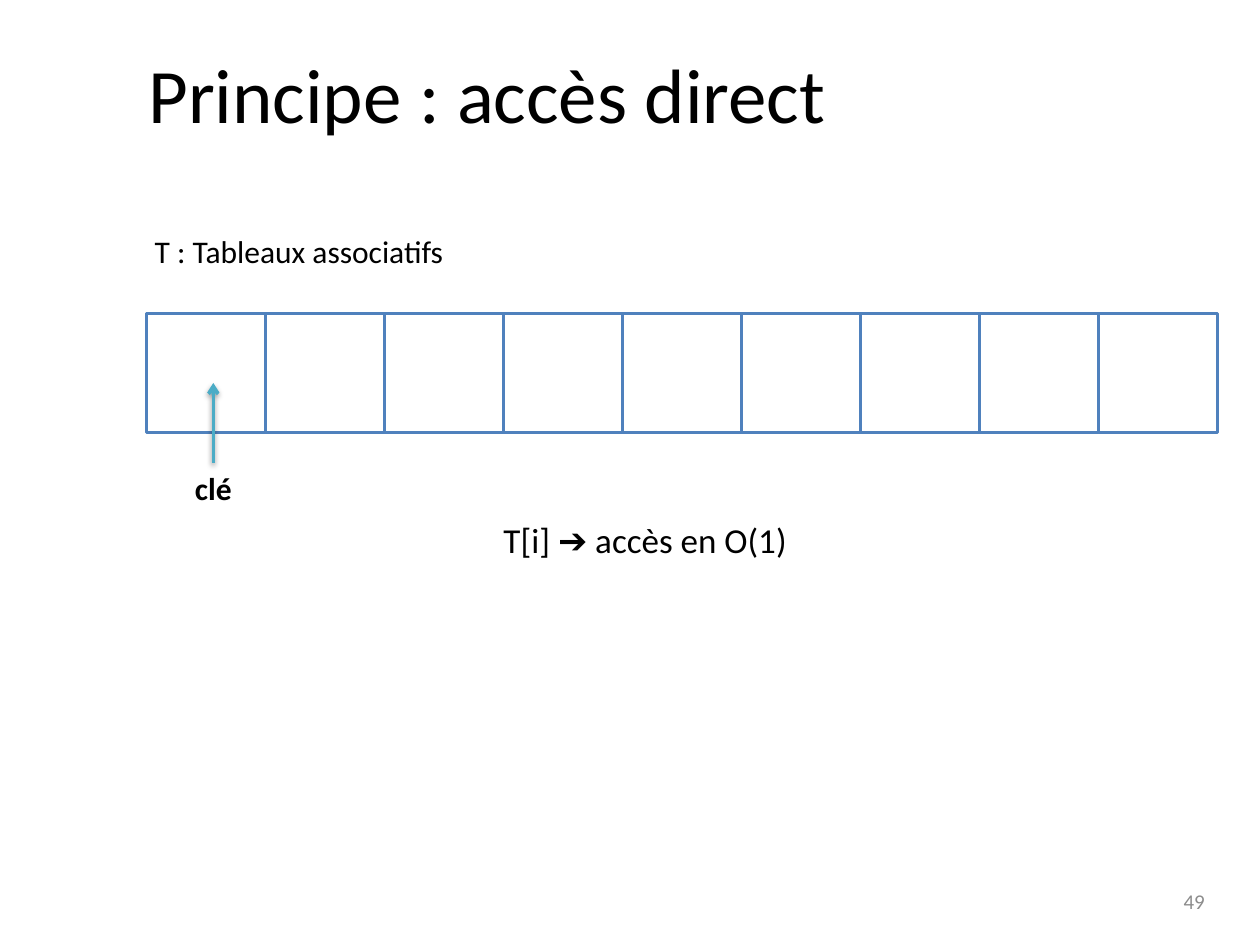
from lxml import etree
from pptx import Presentation
from pptx.dml.color import RGBColor
from pptx.enum.shapes import MSO_CONNECTOR as Connector, MSO_SHAPE as Shape
from pptx.enum.text import MSO_ANCHOR as Anchor, MSO_AUTO_SIZE as AutoSize, PP_ALIGN as Align
from pptx.oxml.ns import qn
from pptx.util import Cm, Pt

COLORS = {
    "text": "000000",
    "number": "8C8C8C",
    "cell": "FFFFFF",
    "border": "4F81BD",
    "arrow": "4BACC6",
    "shadow": "000000",
}
FONT = "Calibri"
CELL_COUNT = 9
CELL_SIZE = 2.4
ROW_LEFT, ROW_TOP = 2.95, 6.32


def rgb(name):
    return RGBColor.from_string(COLORS[name])


def add_text(s, text, left, top, width, height, size, bold=False, color="text"):
    """Add a one-line label that fits its text."""
    box = s.shapes.add_textbox(Cm(left), Cm(top), Cm(width), Cm(height))
    tf = box.text_frame
    tf.word_wrap = False
    tf.auto_size = AutoSize.SHAPE_TO_FIT_TEXT
    p = tf.paragraphs[0]
    p.text = text
    p.font.name = FONT
    p.font.size = Pt(size)
    p.font.bold = bold
    p.font.color.rgb = rgb(color)
    return tf


def add_cell(s, index):
    """Add one square of the array."""
    sp = s.shapes.add_shape(Shape.RECTANGLE, Cm(ROW_LEFT + index * CELL_SIZE),
                            Cm(ROW_TOP), Cm(CELL_SIZE), Cm(CELL_SIZE))
    sp.shadow.inherit = False
    sp.fill.solid()
    sp.fill.fore_color.rgb = rgb("cell")
    sp.line.color.rgb = rgb("border")
    sp.line.width = Pt(2)


def add_arrow(s, x, start, end):
    """Add a vertical arrow with a soft shadow below it."""
    line = s.shapes.add_connector(Connector.STRAIGHT, Cm(x), Cm(start), Cm(x), Cm(end))
    line.line.color.rgb = rgb("arrow")
    line.line.width = Pt(2)
    sp_pr = line._element.spPr
    etree.SubElement(sp_pr.find(qn("a:ln")), qn("a:tailEnd"), type="arrow")
    effects = etree.SubElement(sp_pr, qn("a:effectLst"))
    shadow = etree.SubElement(effects, qn("a:outerShdw"), blurRad=str(Pt(3.1)),
                              dist=str(Pt(1.6)), dir="5400000", rotWithShape="0")
    color = etree.SubElement(shadow, qn("a:srgbClr"), val=COLORS["shadow"])
    etree.SubElement(color, qn("a:alpha"), val="38000")


def add_page_number(s, number):
    tf = add_text(s, number, 18.62, 17.65, 5.92, 1.02, 12, color="number")
    tf.word_wrap = True
    tf.auto_size = AutoSize.NONE
    tf.vertical_anchor = Anchor.MIDDLE
    tf.paragraphs[0].alignment = Align.RIGHT


def main():
    prs = Presentation()
    prs.slide_width, prs.slide_height = Cm(25.4), Cm(19.05)
    s = prs.slides.add_slide(prs.slide_layouts[6])

    # Array
    for index in range(CELL_COUNT):
        add_cell(s, index)

    # Title and labels
    add_text(s, "T : Tableaux associatifs", 2.87, 4.55, 6.53, 1.02, 18)
    add_text(s, "clé", 3.68, 9.34, 1.4, 1.02, 18, bold=True)
    add_text(s, "T[i] ➔ accès en O(1)", 9.9, 10.33, 6.53, 1.12, 20)
    add_text(s, "Principe : accès direct", 2.74, 0.81, 14.3, 2.13, 44)
    add_page_number(s, "49")

    # Arrow from the key to its cell
    add_arrow(s, 4.3, 9.33, 7.72)

    prs.save("out.pptx")


if __name__ == "__main__":
    main()
